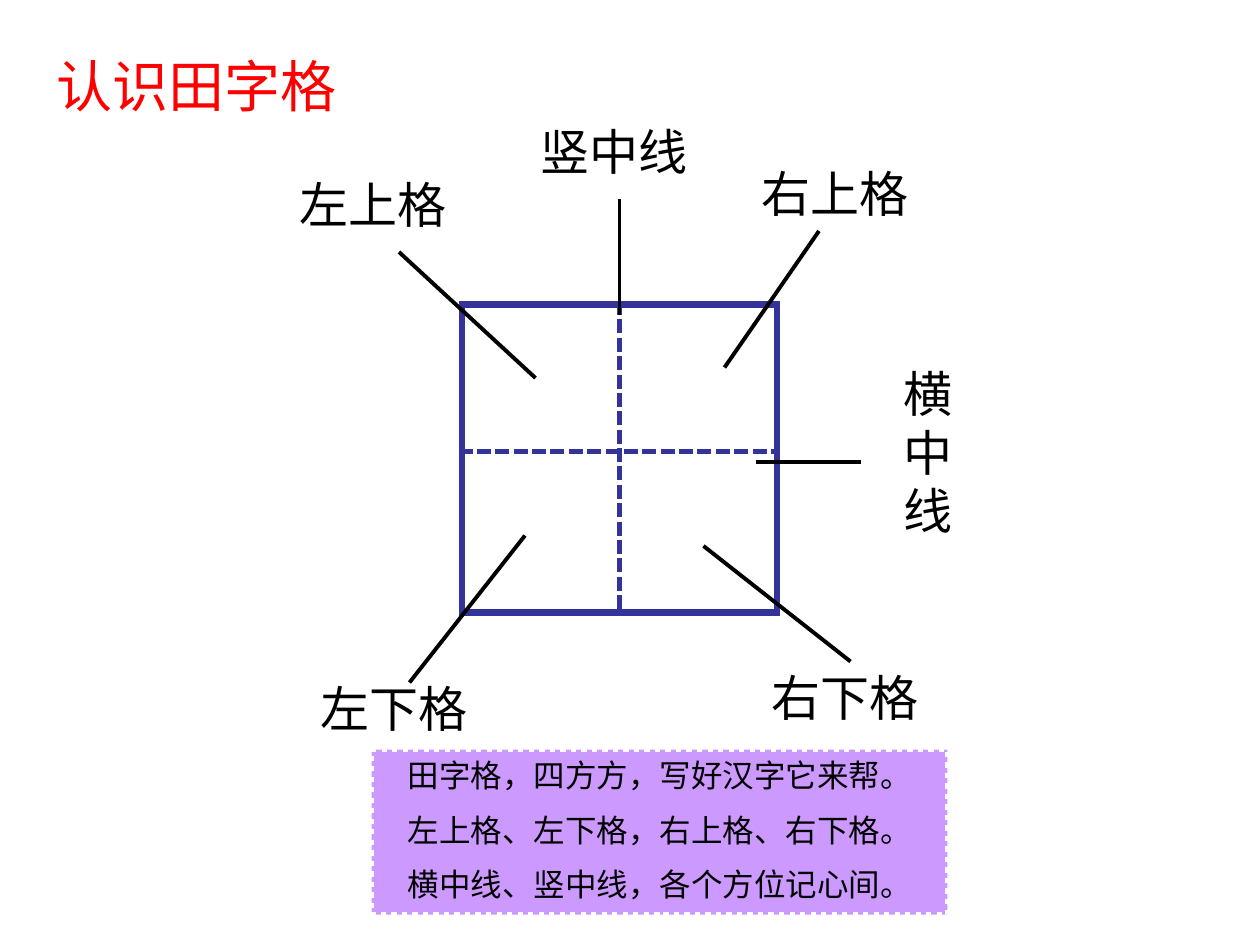
from lxml.etree import SubElement
from pptx import Presentation
from pptx.dml.color import RGBColor
from pptx.enum.dml import MSO_LINE
from pptx.enum.shapes import MSO_CONNECTOR, MSO_SHAPE
from pptx.enum.text import MSO_ANCHOR, MSO_AUTO_SIZE, PP_ALIGN
from pptx.oxml.ns import qn
from pptx.util import Pt

COLORS = {"title": "FF0000", "ink": "000000", "grid": "333399",
          "rhyme": "CC99FF", "edge": "FFFFFF"}

TITLE_FONT = {"name": "Arial", "size": Pt(32)}
LABEL_FONT = {"name": "Times New Roman", "size": Pt(28)}
RHYME_FONT = {"name": "Arial", "size": Pt(18)}
FRAME = {"word_wrap": True, "auto_size": MSO_AUTO_SIZE.NONE,
         "vertical_anchor": MSO_ANCHOR.TOP,
         "margin_left": Pt(7.2), "margin_right": Pt(7.2),
         "margin_top": Pt(3.6), "margin_bottom": Pt(3.6)}

COLUMNS = (90, 90)
ROWS = (84, 92)

CALLOUTS = [
    ("竖中线", (90, 6, 90, -60), (30, -108, 114, 41)),
    ("左下格", (-30, 216, 36, 132), (-96, 210, 114, 41)),
    ("右下格", (138, 138, 222, 204), (162, 204, 114, 41)),
    ("左上格", (-36, -30, 42, 42), (-108, -78, 114, 41)),
    ("右上格", (150, 36, 204, -42), (162, -84, 102, 41)),
    ("横中线", (168, 90, 228, 90), (240, 30, 52.5, 108)),
]
RHYME = ["田字格，四方方，写好汉字它来帮。",
         "左上格、左下格，右上格、右下格。",
         "横中线、竖中线，各个方位记心间。"]


def rgb(key):
    return RGBColor.from_string(COLORS[key])


def apply(target, values):
    for name, value in values.items():
        setattr(target, name, value)


def write(frame, lines, font, color, align, gap=0):
    apply(frame, FRAME)
    frame.text = "\n".join(lines)
    for index, paragraph in enumerate(frame.paragraphs):
        apply(paragraph, {"alignment": align,
                          "space_before": Pt(gap if index else 0)})
        run_font = paragraph.runs[0].font
        apply(run_font, font)
        run_font.color.rgb = rgb(color)


def place_title(slide, left, top, width, height):
    heading = slide.shapes.title
    apply(heading, {"left": Pt(left), "top": Pt(top),
                    "width": Pt(width), "height": Pt(height)})
    write(heading.text_frame, ["认识田字格"], TITLE_FONT, "title", PP_ALIGN.LEFT)


def draw_border(cell, side, outer):
    border = SubElement(cell._tc.get_or_add_tcPr(), qn(f"a:ln{side}"),
                        w=str(Pt(4.5 if outer else 3)))
    fill = SubElement(border, qn("a:solidFill"))
    SubElement(fill, qn("a:srgbClr"), val=COLORS["grid"])
    SubElement(border, qn("a:prstDash"), val="solid" if outer else "dash")


def place_grid(slide, left, top):
    table = slide.shapes.add_table(len(ROWS), len(COLUMNS), Pt(left), Pt(top),
                                   Pt(sum(COLUMNS)), Pt(sum(ROWS))).table
    apply(table, {"first_row": False, "horz_banding": False})
    for column, width in zip(table.columns, COLUMNS):
        column.width = Pt(width)
    for r, height in enumerate(ROWS):
        table.rows[r].height = Pt(height)
        for c in range(len(COLUMNS)):
            cell = table.cell(r, c)
            for side, outer in (("L", c == 0), ("R", c == len(COLUMNS) - 1),
                                ("T", r == 0), ("B", r == len(ROWS) - 1)):
                draw_border(cell, side, outer)
            cell.fill.background()


def place_callout(slide, left, top, name, pointer, label):
    group = slide.shapes.add_group_shape()
    x1, y1, x2, y2 = pointer
    leader = group.shapes.add_connector(
        MSO_CONNECTOR.STRAIGHT, Pt(left + x1), Pt(top + y1),
        Pt(left + x2), Pt(top + y2))
    leader.line.width = Pt(2.25)
    leader.line.color.rgb = rgb("ink")
    SubElement(leader._element.spPr, qn("a:effectLst"))
    x, y, width, height = label
    caption = group.shapes.add_textbox(Pt(left + x), Pt(top + y),
                                       Pt(width), Pt(height))
    write(caption.text_frame, [name], LABEL_FONT, "ink", PP_ALIGN.CENTER)


def place_diagram(slide, left, top):
    place_grid(slide, left, top)
    for name, pointer, label in CALLOUTS:
        place_callout(slide, left, top, name, pointer, label)


def place_rhyme(slide, left, top, width, height):
    panel = slide.shapes.add_shape(MSO_SHAPE.RECTANGLE, Pt(left), Pt(top),
                                   Pt(width), Pt(height))
    panel.shadow.inherit = False
    panel.fill.solid()
    panel.fill.fore_color.rgb = rgb("rhyme")
    panel.line.color.rgb = rgb("edge")
    apply(panel.line, {"width": Pt(3), "dash_style": MSO_LINE.ROUND_DOT})
    write(panel.text_frame, RHYME, RHYME_FONT, "ink", PP_ALIGN.CENTER, gap=9.7)


def main():
    deck = Presentation()
    apply(deck, {"slide_width": Pt(720), "slide_height": Pt(540)})
    slide = deck.slides.add_slide(deck.slide_layouts.get_by_name("Title Only"))
    place_title(slide, 25.2, 26, 215.3, 45.4)
    place_diagram(slide, 264, 174)
    place_rhyme(slide, 212.4, 428.4, 329, 94.3)
    deck.save("out.pptx")


if __name__ == "__main__":
    main()
